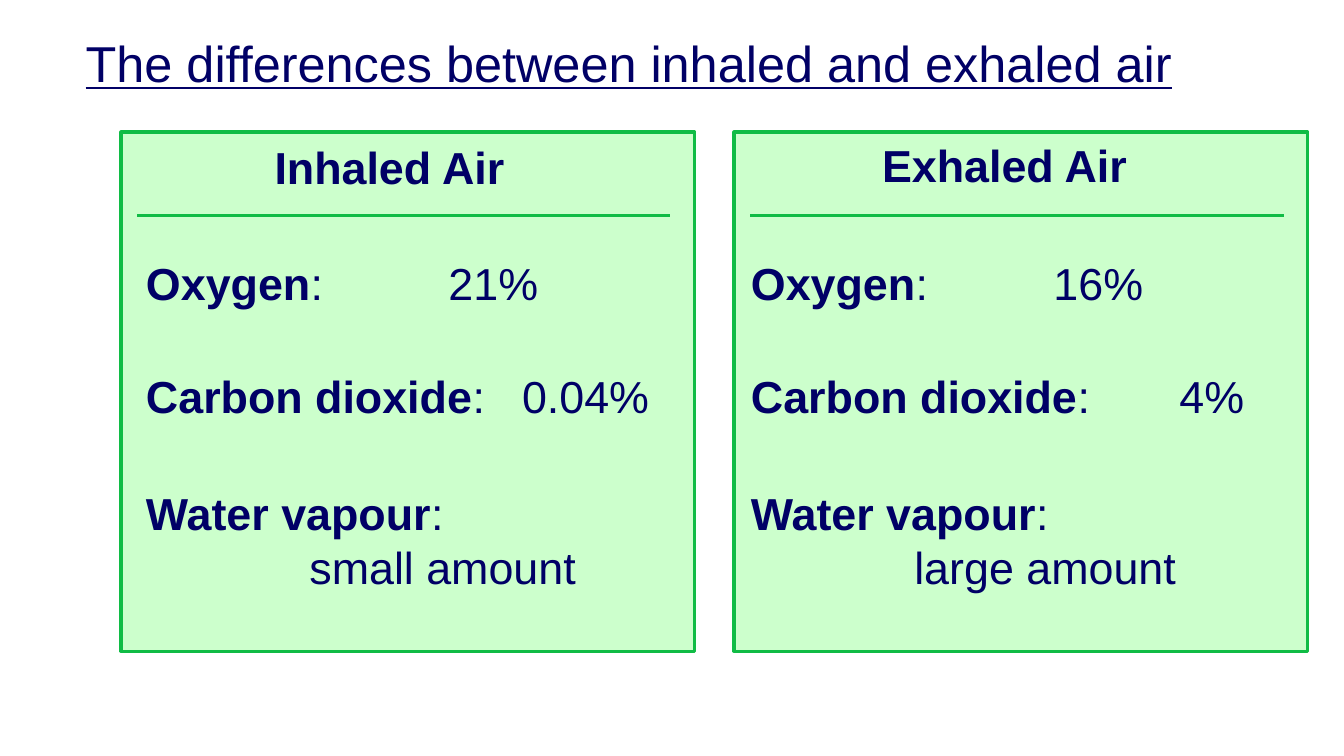
from dataclasses import dataclass

from lxml import etree
from pptx import Presentation
from pptx import util as u
from pptx.dml.color import RGBColor
from pptx.enum import shapes, text
from pptx.oxml.ns import qn


@dataclass(frozen=True)
class Theme:
    font: str = "Arial"
    title_ink: RGBColor = RGBColor(0x01, 0x00, 0x66)
    ink: RGBColor = RGBColor(0x00, 0x00, 0x66)
    panel: RGBColor = RGBColor(0xCC, 0xFF, 0xCC)
    border: RGBColor = RGBColor(0x10, 0xBC, 0x45)
    title_size: u.Pt = u.Pt(36)
    body_size: u.Pt = u.Pt(32)
    line_width: u.Pt = u.Pt(2.25)


theme = Theme()
PX = u.Inches(1) // 100  # 100 px to the inch


def add_text(left, top, width, height):
    """Add a wrapping text box and return its first paragraph."""
    box = slide.shapes.add_textbox(left * PX, top * PX, width * PX, height * PX)
    box.text_frame.word_wrap = True
    return box.text_frame.paragraphs[0]


def style(run, size, color, bold=False):
    run.font.name, run.font.size = theme.font, size
    run.font.color.rgb, run.font.bold = color, bold


presentation = Presentation()
presentation.slide_width, presentation.slide_height = 1333 * PX, 750 * PX
slide = presentation.slides.add_slide(presentation.slide_layouts[5])

# Title
title = slide.shapes.title
title.left, title.top, title.width, title.height = 75 * PX, 27 * PX, 1260 * PX, 71 * PX
frame = title.text_frame
frame.text = "The differences between inhaled and exhaled air"
frame.vertical_anchor = text.MSO_ANCHOR.TOP
frame.auto_size = text.MSO_AUTO_SIZE.NONE
frame.paragraphs[0].alignment = text.PP_ALIGN.LEFT
title_run = frame.paragraphs[0].runs[0]
style(title_run, theme.title_size, theme.title_ink)
title_run.font.underline = True

# Panels: heading, panel left, heading left and top, text left,
# then gas, value and tab stop for each row
panels = [
    ("Inhaled Air", 120, 231, 134, 135,
     [("Oxygen", "21%", 300), ("Carbon dioxide", "0.04%", 373),
      ("Water vapour", "small amount", 162)]),
    ("Exhaled Air", 728, 841, 132, 735,
     [("Oxygen", "16%", 300), ("Carbon dioxide", "4%", 425),
      ("Water vapour", "large amount", 162)]),
]
row_places = [(249, 64), (361, 64), (477, 118)]

for heading, panel_left, heading_left, heading_top, text_left, rows in panels:
    # Panel
    panel = slide.shapes.add_shape(
        shapes.MSO_SHAPE.RECTANGLE, panel_left * PX, 131 * PX, 569 * PX, 515 * PX)
    panel.shadow.inherit = False
    panel.fill.solid()
    panel.fill.fore_color.rgb = theme.panel
    panel.line.color.rgb = theme.border
    panel.line.width = theme.line_width

    # Heading and rule
    paragraph = add_text(heading_left, heading_top, 311, 64)
    paragraph.text = heading
    paragraph.alignment = text.PP_ALIGN.CENTER
    style(paragraph.runs[0], theme.body_size, theme.ink, bold=True)
    rule = slide.shapes.add_connector(
        shapes.MSO_CONNECTOR.STRAIGHT, (panel_left + 16) * PX, 214 * PX,
        (panel_left + 545) * PX, 214 * PX)
    rule.line.color.rgb = theme.border
    rule.line.width = theme.line_width
    etree.SubElement(rule._element.spPr, qn("a:effectLst"))

    # Gas rows, each value set at its tab stop
    for (gas, value, stop), (top, height) in zip(rows, row_places):
        paragraph = add_text(text_left, top, 560, height)
        tabs = etree.SubElement(paragraph._p.get_or_add_pPr(), qn("a:tabLst"))
        etree.SubElement(tabs, qn("a:tab"), pos=str(stop * PX), algn="l")
        for part in (gas, ":", "\t" + value):
            if part.startswith("\t") and gas == "Water vapour":
                paragraph.add_line_break()
            run = paragraph.add_run()
            run.text = part
            style(run, theme.body_size, theme.ink, bold=part == gas)

presentation.save("out.pptx")
